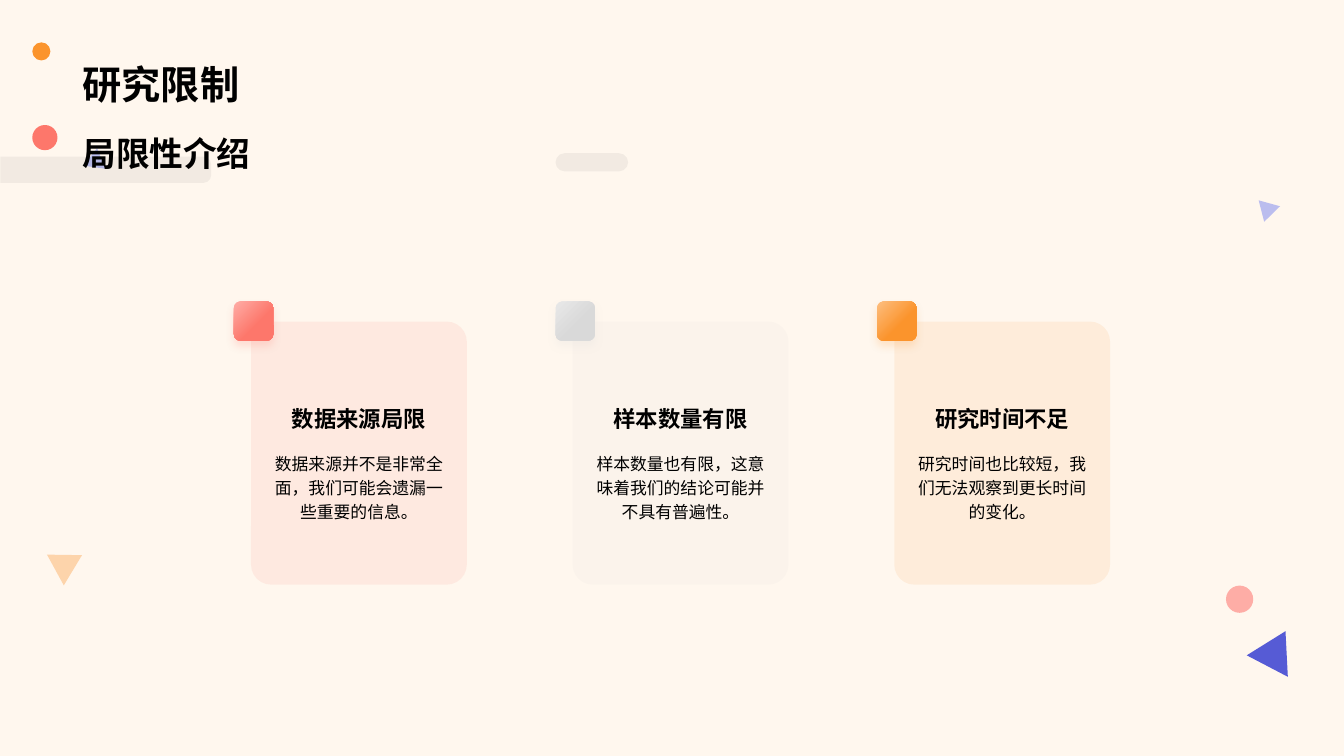
from lxml import etree
from pptx import Presentation
from pptx import util as u
from pptx.dml.color import RGBColor
from pptx.enum import shapes, text
from pptx.oxml import ns

COLORS = {
    "paper": "FFF7EE", "black": "000000", "gray": "808080",
    "coral": "FD776B", "coral_light": "FEADA6",
    "orange": "FB942C", "orange_light": "FDBF80", "peach": "FDD4AB",
    "silver": "D9D9D9", "silver_light": "E8E8E8",
    "blue": "565BD5", "lilac": "BBBDEE",
}
SHAPE = shapes.MSO_SHAPE
ANCHOR = text.MSO_ANCHOR
ALIGN = text.PP_ALIGN


class Deck:
    font = "Arial"

    def __init__(self, width, height):
        self.prs = Presentation()
        self.prs.slide_width = u.Inches(width)
        self.prs.slide_height = u.Inches(height)
        self.s = self.prs.slides.add_slide(self.prs.slide_layouts[5])
        fill = self.s.background.fill
        fill.solid()
        fill.fore_color.rgb = self.rgb("paper")

    def rgb(self, name):
        return RGBColor.from_string(COLORS[name])

    def shape(self, kind, box, color, rotation=0, adj=(), alpha=None):
        sp = self.s.shapes.add_shape(kind, *map(u.Inches, box))
        sp.shadow.inherit = False
        sp.line.fill.background()
        sp.fill.solid()
        sp.fill.fore_color.rgb = self.rgb(color)
        sp.rotation = rotation
        for i, value in enumerate(adj):
            sp.adjustments[i] = value
        if alpha is not None:
            fill = sp._element.spPr.find(ns.qn("a:solidFill"))
            self.set_alpha(fill.find(ns.qn("a:srgbClr")), alpha)
        return sp

    def set_alpha(self, clr, percent):
        etree.SubElement(clr, ns.qn("a:alpha"), val=str(percent * 1000))

    def badge(self, box, color):
        """Rounded square with a diagonal gradient and a soft shadow."""
        sp = self.shape(SHAPE.ROUNDED_RECTANGLE, box, color)
        sp.fill.gradient()
        sp.fill.gradient_angle = 315
        stops = zip(sp.fill.gradient_stops, (0, 0.6), (color + "_light", color))
        for stop, position, name in stops:
            stop.position = position
            stop.color.rgb = self.rgb(name)
        effects = sp._element.spPr.find(ns.qn("a:effectLst"))
        shadow = etree.SubElement(
            effects, ns.qn("a:outerShdw"), blurRad=str(u.Pt(6)),
            dist=str(u.Pt(4)), dir="5400000", algn="t", rotWithShape="0")
        clr = etree.SubElement(shadow, ns.qn("a:srgbClr"), val=COLORS[color])
        self.set_alpha(clr, 20)

    def set_text(self, sp, words, size, bold, align, anchor):
        tf = sp.text_frame
        tf.word_wrap = True
        tf.auto_size = text.MSO_AUTO_SIZE.NONE
        tf.vertical_anchor = anchor
        tf.text = words
        p = tf.paragraphs[0]
        p.alignment = align
        p.font.name = self.font
        p.font.size = u.Pt(size)
        p.font.bold = bold
        p.font.color.rgb = self.rgb("black")
        return tf

    def title(self, box, words):
        sp = self.s.shapes.title
        sp.left, sp.top, sp.width, sp.height = map(u.Inches, box)
        self.set_text(sp, words, 28, True, ALIGN.LEFT, ANCHOR.BOTTOM)

    def text(self, box, words, size, bold=False, align=ALIGN.CENTER,
             anchor=ANCHOR.BOTTOM):
        sp = self.s.shapes.add_textbox(*map(u.Inches, box))
        return self.set_text(sp, words, size, bold, align, anchor)

    def card(self, left, color, heading, body):
        self.shape(SHAPE.ROUNDED_RECTANGLE, (left, 3.19, 2.14, 2.61), color,
                   adj=[0.093], alpha=10)
        self.badge((left - 0.17, 2.99, 0.39, 0.39), color)
        self.text((left + 0.13, 3.89, 1.88, 0.44), heading, 16, bold=True)
        tf = self.text((left + 0.13, 4.37, 1.88, 0.9), body, 12,
                       anchor=ANCHOR.MIDDLE)
        tf.margin_top = tf.margin_bottom = u.Inches(0.1)
        tf.auto_size = text.MSO_AUTO_SIZE.SHAPE_TO_FIT_TEXT
        tf.paragraphs[0].line_spacing = 1.2


def main():
    deck = Deck(13.33, 7.5)

    # Scattered dots and triangles
    for left, top, size, color in [
        (0.32, 1.24, 0.25, "coral"),
        (0.32, 0.42, 0.18, "orange"),
        (12.16, 5.81, 0.27, "coral_light"),
    ]:
        deck.shape(SHAPE.OVAL, (left, top, size, size), color)
    for box, color, rotation in [
        ((12.43, 6.24, 0.46, 0.39), "blue", 27.6),
        ((12.44, 1.96, 0.22, 0.19), "lilac", 315.6),
        ((0.84, 1.47, 0.22, 0.19), "lilac", 8.2),
        ((0.42, 5.43, 0.35, 0.3), "peach", 301.1),
    ]:
        deck.shape(SHAPE.ISOSCELES_TRIANGLE, box, color, rotation)

    # Limitation cards
    cards = [
        ("coral", "数据来源局限",
         "数据来源并不是非常全面，我们可能会遗漏一些重要的信息。"),
        ("silver", "样本数量有限",
         "样本数量也有限，这意味着我们的结论可能并不具有普遍性。"),
        ("orange", "研究时间不足",
         "研究时间也比较短，我们无法观察到更长时间的变化。"),
    ]
    for i, (color, heading, body) in enumerate(cards):
        deck.card(2.49 + 3.19 * i, color, heading, body)

    # Gray bars, subtitle and title
    deck.shape(SHAPE.ROUND_2_SAME_RECTANGLE, (0.92, 0.64, 0.26, 2.09), "gray",
               rotation=90, adj=[0.303, 0], alpha=10)
    deck.shape(SHAPE.ROUNDED_RECTANGLE, (5.51, 1.52, 0.72, 0.18), "gray",
               adj=[0.5], alpha=10)
    deck.text((0.72, 0.96, 5.57, 0.81), "局限性介绍", 24, bold=True,
              align=ALIGN.LEFT)
    deck.title((0.72, 0, 11.88, 1.12), "研究限制")

    deck.prs.save("out.pptx")


if __name__ == "__main__":
    main()
